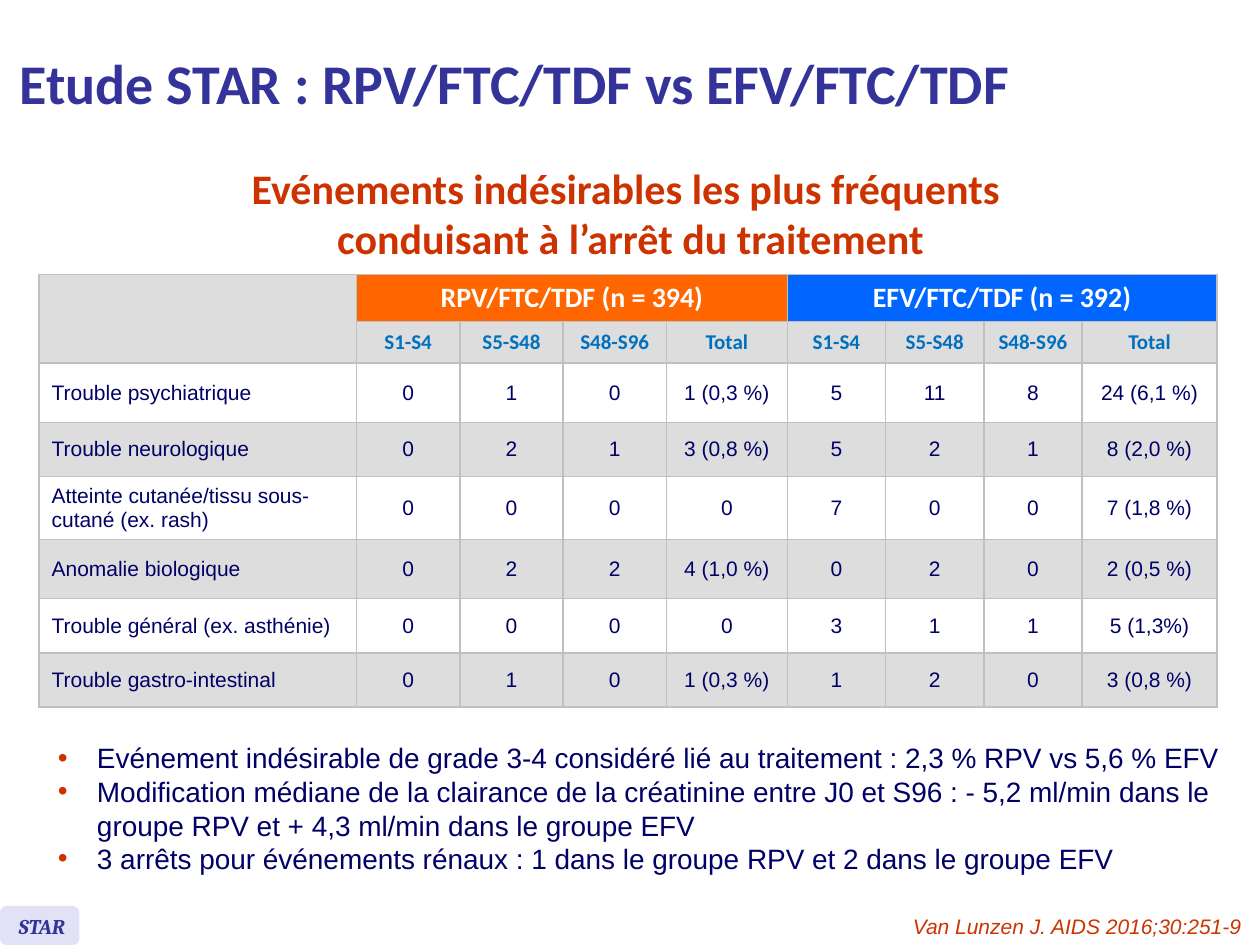
from dataclasses import dataclass
from lxml.etree import SubElement
from pptx import Presentation
from pptx.dml.color import RGBColor
from pptx.enum.shapes import MSO_SHAPE
from pptx.enum.text import MSO_ANCHOR, MSO_AUTO_SIZE, PP_ALIGN
from pptx.oxml.ns import qn
from pptx.util import Inches, Pt

COLORS = {
    "red": "CC3300", "navy": "000066", "indigo": "333399", "lavender": "E2E2F6",
    "orange": "FF6600", "blue": "0066FF", "period": "0070C0",
    "grey": "DDDDDD", "border": "C0C0C0", "white": "FFFFFF",
}
WIDTH, HEIGHT = Inches(10), Inches(7.5)
GRID_COLUMNS, GRID_ROWS = 100, 75


@dataclass(frozen=True)
class Area:
    """A rectangle in grid columns and rows."""
    column: float
    row: float
    columns: float
    rows: float

    def bounds(self) -> tuple[int, int, int, int]:
        return (across(self.column), down(self.row), across(self.columns), down(self.rows))


@dataclass(frozen=True)
class Style:
    size: float
    color: str
    font: str = "Arial"
    bold: bool = False
    italic: bool = False


@dataclass(frozen=True)
class Arm:
    name: str
    color: str
    first_column: int


HEADING = Style(32, "indigo", "Calibri", bold=True)
SUBTITLE = Style(24, "red", "Calibri", bold=True)
BULLET = Style(16, "navy")
CITATION = Style(12, "red", italic=True)
BADGE = Style(12, "indigo", "Cambria", bold=True, italic=True)
ARM = Style(16, "white", "Calibri", bold=True)
PERIOD = Style(12, "period", "Calibri", bold=True)
BODY = Style(12, "navy")

PERIODS = ["S1-S4", "S5-S48", "S48-S96", "Total"]
ARMS = [
    Arm("RPV/FTC/TDF (n = 394)", "orange", 1),
    Arm("EFV/FTC/TDF (n = 392)", "blue", 1 + len(PERIODS)),
]
EVENTS = [
    ["Trouble psychiatrique", "0", "1", "0", "1 (0,3 %)", "5", "11", "8", "24 (6,1 %)"],
    ["Trouble neurologique", "0", "2", "1", "3 (0,8 %)", "5", "2", "1", "8 (2,0 %)"],
    ["Atteinte cutanée/tissu sous-cutané (ex. rash)",
     "0", "0", "0", "0", "7", "0", "0", "7 (1,8 %)"],
    ["Anomalie biologique", "0", "2", "2", "4 (1,0 %)", "0", "2", "0", "2 (0,5 %)"],
    ["Trouble général (ex. asthénie)", "0", "0", "0", "0", "3", "1", "1", "5 (1,3%)"],
    ["Trouble gastro-intestinal", "0", "1", "0", "1 (0,3 %)", "1", "2", "0", "3 (0,8 %)"],
]
COLUMN_SPANS = [25.2] + [8.2] * 3 + [9.6] + [7.8] * 3 + [10.7]
ROW_SPANS = [3.7, 3.3, 4.7, 4.3, 5, 4.7, 4.3, 4.3]
FINDINGS = [
    "Evénement indésirable de grade 3-4 considéré lié au traitement : 2,3 % RPV vs 5,6 % EFV",
    "Modification médiane de la clairance de la créatinine entre J0 et S96 : "
    "- 5,2 ml/min dans le groupe RPV et + 4,3 ml/min dans le groupe EFV",
    "3 arrêts pour événements rénaux : 1 dans le groupe RPV et 2 dans le groupe EFV",
]


def across(columns: float) -> int:
    return round(WIDTH * columns / GRID_COLUMNS)


def down(rows: float) -> int:
    return round(HEIGHT * rows / GRID_ROWS)


def rgb(name: str) -> RGBColor:
    return RGBColor.from_string(COLORS[name])


def add_span(para, text: str, style: Style) -> None:
    span = para.add_run()
    span.text = text
    font = span.font
    font.name, font.size = style.font, Pt(style.size)
    font.bold, font.italic = style.bold, style.italic
    font.color.rgb = rgb(style.color)


def place(shape, area: Area, anchor=MSO_ANCHOR.TOP):
    """Move a text shape to its area and return its wrapped frame."""
    shape.left, shape.top, shape.width, shape.height = area.bounds()
    frame = shape.text_frame
    frame.word_wrap = True
    frame.auto_size = MSO_AUTO_SIZE.NONE
    frame.vertical_anchor = anchor
    return frame


def add_text(shapes, area: Area, text: str, style: Style,
             align=PP_ALIGN.LEFT, anchor=MSO_ANCHOR.TOP) -> None:
    frame = place(shapes.add_textbox(*area.bounds()), area, anchor)
    para = frame.paragraphs[0]
    para.alignment = align
    add_span(para, text, style)


def fill_subtitle(page) -> None:
    frame = place(page.shapes.title, Area(2.5, 13.7, 95.1, 6.4), MSO_ANCHOR.MIDDLE)
    para = frame.paragraphs[0]
    para.alignment = PP_ALIGN.CENTER
    add_span(para, "Evénements indésirables les plus fréquents ", SUBTITLE)
    para.add_line_break()
    add_span(para, "conduisant à l’arrêt du traitement", SUBTITLE)


def fill_findings(page) -> None:
    frame = place(page.placeholders[1], Area(3.6, 58.3, 95.4, 11.8))
    for index, finding in enumerate(FINDINGS):
        para = frame.add_paragraph() if index else frame.paragraphs[0]
        properties = para._p.get_or_add_pPr()
        properties.set("marL", str(across(3.1)))
        properties.set("indent", str(-across(3.1)))
        bullet_color = SubElement(properties, qn("a:buClr"))
        SubElement(bullet_color, qn("a:srgbClr"), val=COLORS["red"])
        SubElement(properties, qn("a:buChar"), char="•")
        para.space_before = Pt(0)
        add_span(para, finding, BULLET)


def add_badge(page) -> None:
    group = page.shapes.add_group_shape()
    plate = group.shapes.add_shape(
        MSO_SHAPE.ROUNDED_RECTANGLE, *Area(0, 71.9, 6.3, 3.1).bounds())
    plate.shadow.inherit = False
    plate.fill.solid()
    plate.fill.fore_color.rgb = rgb("lavender")
    plate.line.fill.background()
    add_text(group.shapes, Area(0.5, 72, 6.1, 3), "STAR", BADGE)


def format_cell(cell, fill: str) -> None:
    """Give a cell its borders, fill and a small size for empty text."""
    properties = cell._tc.get_or_add_tcPr()
    for side in ("lnL", "lnR", "lnT", "lnB"):
        line = SubElement(properties, qn(f"a:{side}"), w=str(Pt(1)))
        line_fill = SubElement(line, qn("a:solidFill"))
        SubElement(line_fill, qn("a:srgbClr"), val=COLORS["border"])
    cell.fill.solid()
    cell.fill.fore_color.rgb = rgb(fill)
    cell.vertical_anchor = MSO_ANCHOR.MIDDLE
    SubElement(cell.text_frame.paragraphs[0]._p, qn("a:endParaRPr"), sz="1200")


def write_cell(cell, text: str, style: Style, align=PP_ALIGN.CENTER) -> None:
    para = cell.text_frame.paragraphs[0]
    para.alignment = align
    add_span(para, text, style)


def add_event_table(page) -> None:
    area = Area(3.1, 21.8, sum(COLUMN_SPANS), sum(ROW_SPANS))
    table = page.shapes.add_table(len(ROW_SPANS), len(COLUMN_SPANS), *area.bounds()).table
    table.first_row = table.horz_banding = False
    for column, span in zip(table.columns, COLUMN_SPANS):
        column.width = across(span)
    for index, (row, span) in enumerate(zip(table.rows, ROW_SPANS)):
        row.height = down(span)
        for cell in row.cells:
            format_cell(cell, "white" if index > 1 and index % 2 == 0 else "grey")
    table.cell(0, 0).merge(table.cell(1, 0))
    for arm in ARMS:
        last_column = arm.first_column + len(PERIODS) - 1
        header = table.cell(0, arm.first_column)
        header.merge(table.cell(0, last_column))
        header.fill.fore_color.rgb = rgb(arm.color)
        write_cell(header, arm.name, ARM)
        for column, period in enumerate(PERIODS, arm.first_column):
            write_cell(table.cell(1, column), period, PERIOD)
    for row, event in enumerate(EVENTS, 2):
        for column, text in enumerate(event):
            align = PP_ALIGN.CENTER if column else PP_ALIGN.LEFT
            write_cell(table.cell(row, column), text, BODY, align)


def main() -> None:
    deck = Presentation()
    deck.slide_width, deck.slide_height = WIDTH, HEIGHT
    page = deck.slides.add_slide(deck.slide_layouts[1])
    fill_subtitle(page)
    fill_findings(page)
    add_text(page.shapes, Area(70, 72, 30, 3), "Van Lunzen J. AIDS 2016;30:251-9 ",
             CITATION, PP_ALIGN.RIGHT)
    add_badge(page)
    add_event_table(page)
    add_text(page.shapes, Area(0.6, 0.5, 95.5, 12.1),
             "Etude STAR : RPV/FTC/TDF vs EFV/FTC/TDF", HEADING, anchor=MSO_ANCHOR.MIDDLE)
    deck.save("out.pptx")


if __name__ == "__main__":
    main()
